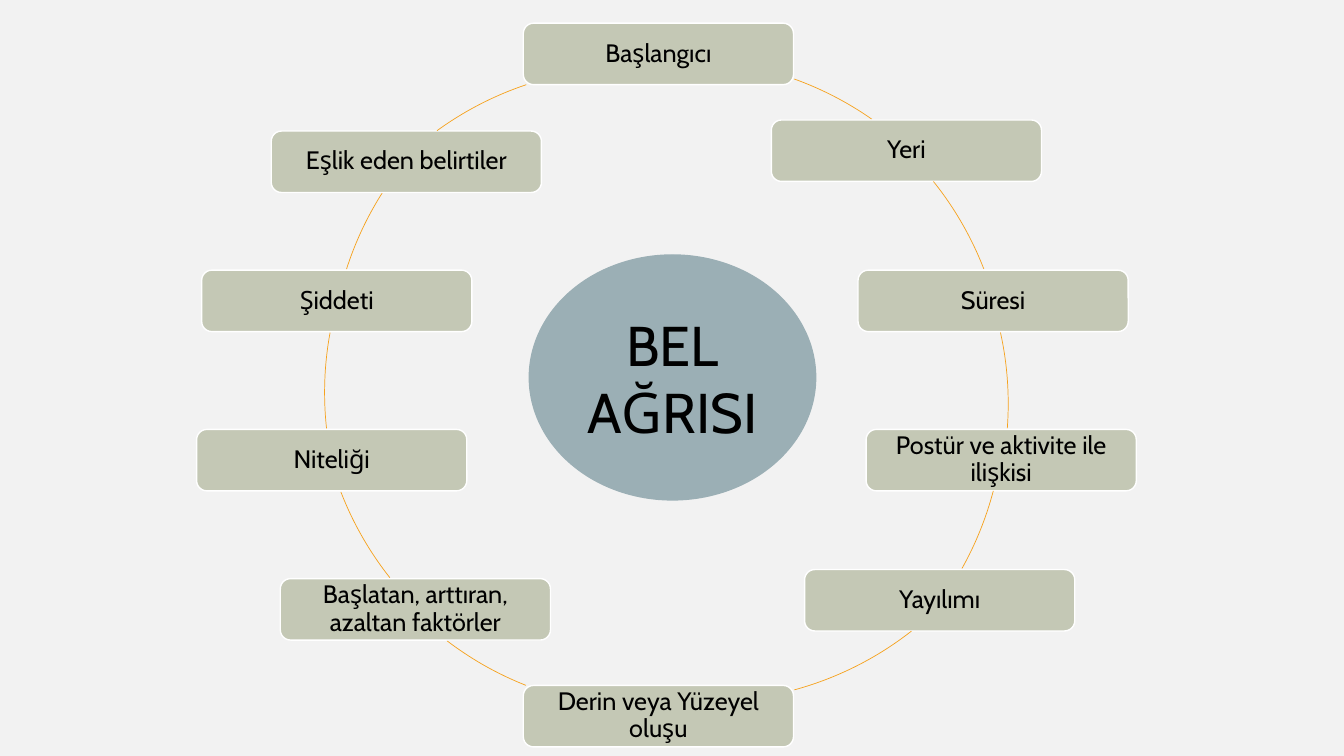
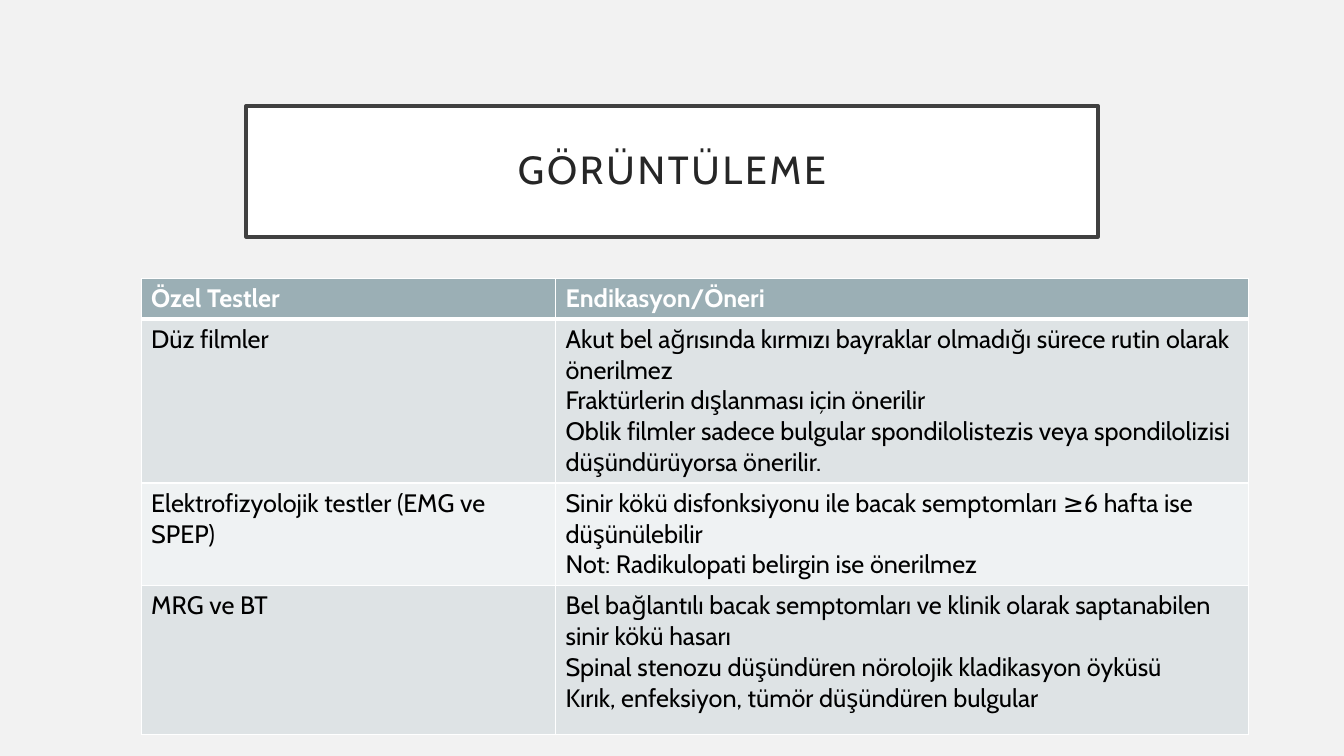
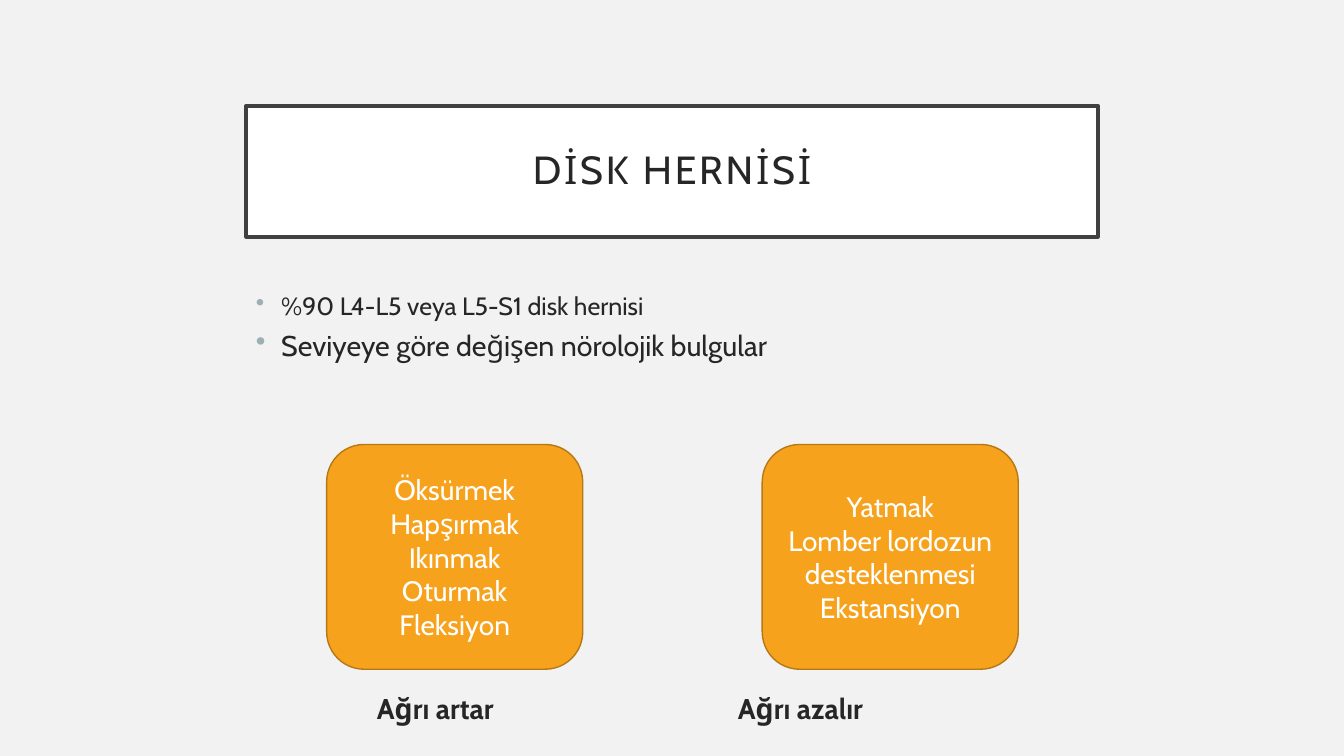
from math import atan2, degrees

from lxml.etree import SubElement
from pptx import Presentation
from pptx.dml.color import RGBColor
from pptx.enum.shapes import MSO_SHAPE
from pptx.enum.text import MSO_ANCHOR, PP_ALIGN
from pptx.oxml import parse_xml
from pptx.oxml.ns import nsdecls, qn
from pptx.util import Inches, Pt

FONT = "Cabin"
BLACK, WHITE, INK, FRAME = "000000", "FFFFFF", "262626", "404040"
PAPER, SAGE, STEEL = "F2F2F2", "C4C8B5", "9BAFB5"
ORANGE, RUST = "F6A21D", "B67815"
BANDS = ["DEE3E5", "EFF2F3"]
MID = {"word_wrap": True, "vertical_anchor": MSO_ANCHOR.MIDDLE}
hue = RGBColor.from_string


def write(frame, lines, color, font, para={}, body={}):
    """Fill a text frame, one paragraph a line, and return the paragraphs."""
    for key, val in body.items():
        setattr(frame, key, val)
    for i, line in enumerate(lines):
        p = frame.add_paragraph() if i else frame.paragraphs[0]
        for key, val in para.items():
            setattr(p, key, val)
        run = p.add_run()
        run.text = line
        run.font.color.rgb = hue(color)
        for key, val in {"name": FONT, **font}.items():
            setattr(run.font, key, val)
    return frame.paragraphs


def draw(slide, kind, place, fill, line, width):
    """Add a preset shape; a fill of None leaves it open."""
    shape = slide.shapes.add_shape(kind, *map(Inches, place))
    shape.shadow.inherit = False
    if fill:
        shape.fill.solid()
        shape.fill.fore_color.rgb = hue(fill)
    else:
        shape.fill.background()
    shape.line.color.rgb = hue(line)
    shape.line.width = Pt(width)
    return shape


prs = Presentation()
prs.slide_width, prs.slide_height = Inches(13.33), Inches(7.5)
ground = prs.slide_master.background.fill
ground.solid()
ground.fore_color.rgb = hue(PAPER)

# Slides and their titles
center = {"alignment": PP_ALIGN.CENTER}
tight = {**center, "line_spacing": 0.9}
sides = ["left", "top", "right", "bottom"]
pad = {f"margin_{side}": Inches(0.2) for side in sides}
slides = []
for title in [None, "GÖRÜNTÜLEME", "DİSK HERNİSİ"]:
    slide = prs.slides.add_slide(prs.slide_layouts[6])
    slides.append(slide)
    if title:
        head = draw(slide, MSO_SHAPE.RECTANGLE, (2.44, 1.05, 8.45, 1.3),
                    WHITE, FRAME, 2.5)
        text = write(head.text_frame, [title], INK, {"size": Pt(28)},
                     tight, {**MID, **pad})
        text[0].runs[0].font._element.set("spc", "200")
cycle, tests, disc = slides

# Ring of pain traits: label, box corner, arc corner, arc start, arc end
ring = [
    ("Başlangıcı", (5.19, 0.23), (3.48, 0.59), (7.88, 0.78), (8.65, 1.18)),
    ("Yeri", (7.65, 1.19), (3.41, 0.57), (9.26, 1.8), (9.76, 2.67)),
    ("Süresi", (8.51, 2.68), (3.43, 0.72), (9.92, 3.3), (9.99, 4.25)),
    ("Postür ve aktivite ile ilişkisi", (8.59, 4.26), (3.39, 0.75),
     (9.85, 4.87), (9.54, 5.64)),
    ("Yayılımı", (7.98, 5.65), (3.73, 0.39), (9.04, 6.26), (7.88, 6.85)),
    ("Derin veya Yüzeyel oluşu", (5.19, 6.8), (3.14, 0.46),
     (5.22, 6.79), (4.44, 6.35)),
    ("Başlatan, arttıran, azaltan faktörler", (2.78, 5.74), (3.16, 0.41),
     (3.87, 5.73), (3.38, 4.88)),
    ("Niteliği", (1.95, 4.26), (3.22, 0.61), (3.24, 4.25), (3.28, 3.3)),
    ("Şiddeti", (2, 2.68), (3.28, 0.39), (3.44, 2.67), (3.79, 1.91)),
    ("Eşlik eden belirtiler", (2.69, 1.3), (2.98, 0.67),
     (4.33, 1.29), (5.22, 0.84)),
]
SPAN = 6.57
for label, spot, (left, top), *ends in ring:
    node = draw(cycle, MSO_SHAPE.ROUNDED_RECTANGLE, (*spot, 2.68, 0.61),
                SAGE, WHITE, 1)
    write(node.text_frame, [label], BLACK, {"size": Pt(18)}, tight, MID)
    arc = draw(cycle, MSO_SHAPE.ARC, (left, top, SPAN, SPAN),
               None, ORANGE, 0.5)
    for i, (x, y) in enumerate(ends):
        turn = degrees(atan2(y - top - SPAN / 2, x - left - SPAN / 2)) % 360
        arc.adjustments[i] = turn * 0.6  # 60000 units a degree, over 100000
hub = draw(cycle, MSO_SHAPE.OVAL, (5.25, 2.53, 2.84, 2.43), STEEL, STEEL, 1)
write(hub.text_frame, ["BEL AĞRISI"], BLACK, {"size": Pt(40)}, center, MID)

# Table of tests
rows = [
    (0.37, ["Özel Testler"], ["Endikasyon/Öneri"]),
    (1.49, ["Düz filmler"], [
        "Akut bel ağrısında kırmızı bayraklar olmadığı sürece rutin olarak "
        "önerilmez",
        "Fraktürlerin dışlanması için önerilir",
        "Oblik filmler sadece bulgular spondilolistezis veya spondilolizisi "
        "düşündürüyorsa önerilir."]),
    (0.93, ["Elektrofizyolojik testler (EMG ve SPEP)"], [
        "Sinir kökü disfonksiyonu ile bacak semptomları ≥6 hafta ise "
        "düşünülebilir",
        "Not: Radikulopati belirgin ise önerilmez"]),
    (1.48, ["MRG ve BT"], [
        "Bel bağlantılı bacak semptomları ve klinik olarak saptanabilen "
        "sinir kökü hasarı",
        "Spinal stenozu düşündüren nörolojik kladikasyon öyküsü",
        "Kırık, enfeksiyon, tümör düşündüren bulgular"]),
]
place = map(Inches, (1.4, 2.76, 10.98, 4.27))
table = tests.shapes.add_table(len(rows), 2, *place).table
for col, width in zip(table.columns, [4.11, 6.87]):
    col.width = Inches(width)
for r, (height, *texts) in enumerate(rows):
    table.rows[r].height = Inches(height)
    for c, lines in enumerate(texts):
        cell = table.cell(r, c)
        write(cell.text_frame, lines, BLACK if r else WHITE,
              {"size": Pt(18), "bold": r == 0})
        cell.fill.solid()
        cell.fill.fore_color.rgb = hue(BANDS[(r - 1) % 2] if r else STEEL)
        props = cell._tc.get_or_add_tcPr()
        for i, side in enumerate("LRTB"):
            thick = 3 if (r, side) in [(0, "B"), (1, "T")] else 1
            props.insert(i, parse_xml(
                f'<a:ln{side} {nsdecls("a")} w="{Pt(thick)}"><a:solidFill>'
                f'<a:srgbClr val="{WHITE}"/></a:solidFill></a:ln{side}>'))

# Disc hernia: bullets, then what worsens and what eases the pain
note = disc.shapes.add_textbox(*map(Inches, (2.44, 2.89, 8.45, 1)))
points = write(note.text_frame, [
    "%90 L4-L5 veya L5-S1 disk hernisi",
    "Seviyeye göre değişen nörolojik bulgular",
], INK, {}, {"line_spacing": 0.8, "space_before": Pt(10)},
    {"word_wrap": True})
for p, size in zip(points, [17.9, 20.4]):
    p.runs[0].font.size = Pt(size)
    props = p._p.get_or_add_pPr()
    props.set("marL", str(Inches(0.25)))
    props.set("indent", str(Inches(-0.25)))
    tint = SubElement(props, qn("a:buClr"))
    SubElement(tint, qn("a:srgbClr")).set("val", STEEL)
    SubElement(props, qn("a:buChar")).set("char", "•")

cards = [
    (3.24, ["Öksürmek", "Hapşırmak", "Ikınmak", "Oturmak", "Fleksiyon"],
     3.64, "Ağrı artar"),
    (7.56, ["Yatmak", "Lomber lordozun desteklenmesi", "Ekstansiyon"],
     7.22, "Ağrı azalır"),
]
for left, lines, start, label in cards:
    card = draw(disc, MSO_SHAPE.ROUNDED_RECTANGLE, (left, 4.41, 2.54, 2.23),
                ORANGE, RUST, 1)
    write(card.text_frame, lines, WHITE, {"size": Pt(20)}, center, MID)
    tag = disc.shapes.add_textbox(*map(Inches, (start, 6.82, 1.8, 0.4)))
    write(tag.text_frame, [label], INK, {"size": Pt(20.4), "bold": True},
          {}, MID)

prs.save("out.pptx")
